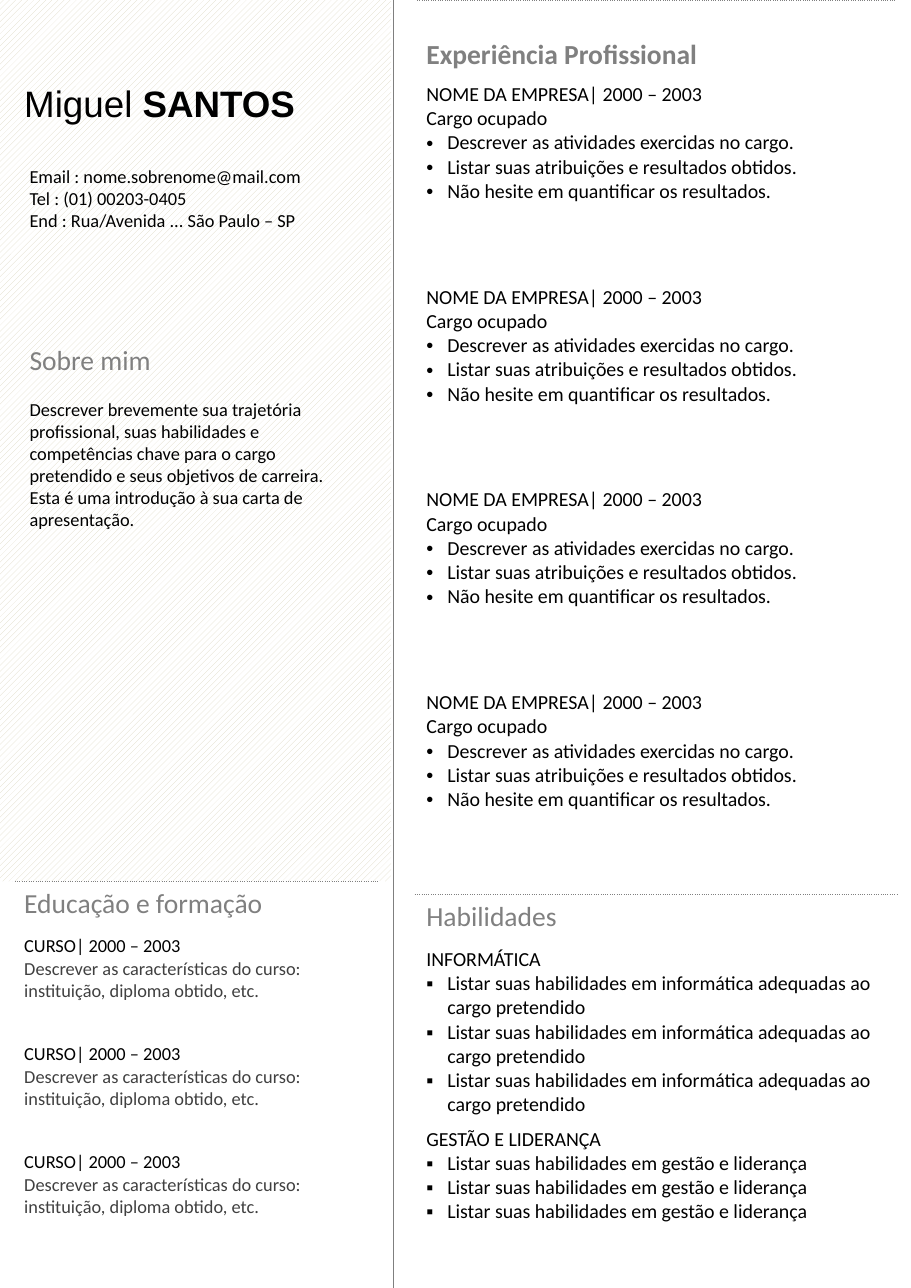
import pptx
import pptx.util
import pptx.dml.color
import pptx.enum.dml
import pptx.enum.shapes
import pptx.enum.text
import pptx.oxml
import pptx.oxml.ns
from lxml import etree

Pt = pptx.util.Pt
Inches = pptx.util.Inches
qn = pptx.oxml.ns.qn
ANCHOR = pptx.enum.text.MSO_ANCHOR
AUTO_SIZE = pptx.enum.text.MSO_AUTO_SIZE

COLORS = {"paper": "FFFFFF", "stripe": "DDD9C3", "rule": "7F7F7F",
          "heading": "808080", "ink": "000000", "soft": "404040"}

# Font values and colour of each kind of text
STYLES = {
    "name": ({"name": "Arial", "size": Pt(24), "bold": False}, "ink"),
    "surname": ({"name": "Arial", "size": Pt(24), "bold": True}, "ink"),
    "heading": ({"name": "Calibri", "size": Pt(18), "bold": False}, "heading"),
    "strong heading": ({"name": "Calibri", "size": Pt(18), "bold": True}, "heading"),
    "body": ({"name": "Calibri", "size": Pt(13), "bold": False}, "ink"),
    "small": ({"name": "Calibri", "size": Pt(12), "bold": False}, "ink"),
    "soft": ({"name": "Calibri", "size": Pt(12), "bold": False}, "soft"),
}

JOB = [("NOME DA EMPRESA| 2000 – 2003", "body", ""),
       ("Cargo ocupado", "body", ""),
       ("Descrever as atividades exercidas no cargo.", "body", "•"),
       ("Listar suas atribuições e resultados obtidos.", "body", "•"),
       ("Não hesite em quantificar os resultados.", "body", "•")]
COMPUTING = [("INFORMÁTICA", "body", "")] + 3 * [
    ("Listar suas habilidades em informática adequadas ao cargo pretendido", "body", "▪")]
LEADERSHIP = [("GESTÃO E LIDERANÇA", "body", "")] + 3 * [
    ("Listar suas habilidades em gestão e liderança", "body", "▪")]
COURSE = [("CURSO| 2000 – 2003", "small", ""),
          ("Descrever as características do curso: instituição, diploma obtido, etc.",
           "soft", "")]
CONTACT = [("Email : nome.sobrenome@mail.com", "small", ""),
           ("Tel : (01) 00203-0405", "small", ""),
           ("End : Rua/Avenida ... São Paulo – SP", "small", "")]
ABOUT = [("Sobre mim", "heading", ""),
         ("Descrever brevemente sua trajetória profissional, suas habilidades e "
          "competências chave para o cargo pretendido e seus objetivos de carreira. "
          "Esta é uma introdução à sua carta de apresentação.", "small", "")]


def rgb(color):
    return pptx.dml.color.RGBColor.from_string(COLORS[color])


def portion(box, left, top, width, height):
    """Return the part of a box given in percent of its size."""
    x, y, w, h = box
    return (int(x + w * left / 100), int(y + h * top / 100),
            int(w * width / 100), int(h * height / 100))


def add_run(paragraph, text, style):
    run = paragraph.add_run()
    run.text = text
    values, color = STYLES[style]
    for key, value in values.items():
        setattr(run.font, key, value)
    run.font.color.rgb = rgb(color)


def add_bullet(paragraph, character):
    properties = paragraph._p.get_or_add_pPr()
    properties.set("marL", str(Inches(0.19)))
    properties.set("indent", str(-Inches(0.19)))
    etree.SubElement(properties, qn("a:buFont")).set("typeface", "Arial")
    etree.SubElement(properties, qn("a:buChar")).set("char", character)


def write(frame, lines):
    for index, (text, style, bullet) in enumerate(lines):
        paragraph = frame.add_paragraph() if index else frame.paragraphs[0]
        if bullet:
            add_bullet(paragraph, bullet)
        add_run(paragraph, text, style)


def add_text(slide, box, lines):
    frame = slide.shapes.add_textbox(*box).text_frame
    frame.word_wrap = True
    frame.auto_size = AUTO_SIZE.SHAPE_TO_FIT_TEXT
    write(frame, lines)
    return frame


def add_border(cell, side):
    line = etree.SubElement(cell._tc.get_or_add_tcPr(), qn("a:" + side))
    line.set("w", str(Pt(1)))
    fill = etree.SubElement(line, qn("a:solidFill"))
    etree.SubElement(fill, qn("a:srgbClr")).set("val", COLORS["heading"])
    etree.SubElement(line, qn("a:prstDash")).set("val", "sysDot")


def add_section_table(slide, box, rows):
    """Each row is its percent of the height, its lines and its dotted side."""
    table = slide.shapes.add_table(len(rows), 1, *box).table
    table.first_row = table.horz_banding = False
    for index, (share, lines, border) in enumerate(rows):
        table.rows[index].height = int(box[3] * share / 100)
        cell = table.cell(index, 0)
        if border:
            add_border(cell, border)
        cell.fill.solid()
        cell.fill.fore_color.rgb = rgb("paper")
        write(cell.text_frame, lines)
        if not lines:  # keep an empty row from growing
            paragraph = cell.text_frame.paragraphs[0]._p
            etree.SubElement(paragraph, qn("a:endParaRPr")).set("sz", "1000")
    return table


def add_profile(slide, box):
    # Striped panel
    panel = slide.shapes.add_shape(pptx.enum.shapes.MSO_SHAPE.RECTANGLE, *box)
    panel.shadow.inherit = False
    panel.line.fill.background()
    panel.fill.patterned()
    panel.fill.pattern = pptx.enum.dml.MSO_PATTERN.WIDE_UPWARD_DIAGONAL
    panel.fill.fore_color.rgb = rgb("stripe")
    panel.fill.back_color.rgb = rgb("paper")

    # Name, in front of the panel
    title = slide.shapes.title
    panel._element.addnext(title._element)
    title.left, title.top, title.width, title.height = portion(
        box, 3.92, 8.5, 75.35, 6.25)
    frame = title.text_frame
    for key, value in {"word_wrap": False, "auto_size": AUTO_SIZE.NONE,
                       "vertical_anchor": ANCHOR.TOP}.items():
        setattr(frame, key, value)
    paragraph = frame.paragraphs[0]
    paragraph.alignment = pptx.enum.text.PP_ALIGN.LEFT
    add_run(paragraph, "Miguel ", "name")
    add_run(paragraph, "SANTOS", "surname")

    # Contact and presentation
    add_text(slide, portion(box, 5.32, 18.12, 86.83, 8.88), CONTACT)
    about = add_text(slide, portion(box, 5.32, 38.25, 82.63, 25.25), ABOUT)
    about.paragraphs[1].space_before = Pt(14.6)


def add_education(slide, box):
    heading = [("Educação e formação", "heading", "")]
    add_section_table(slide, box, [(13.02, heading, "lnT")] + 3 * [(28.99, COURSE, "")])


def add_career(slide, box):
    experience = [("Experiência Profissional", "strong heading", "")]
    skills = [("Habilidades", "heading", "")]
    rows = [(6.08, experience, "lnT")] + 3 * [(15.99, JOB, "")] + [
        (13.9, JOB, ""), (2.61, [], "lnB"), (3.74, skills, "lnT"),
        (14.16, COMPUTING, ""), (8.51, LEADERSHIP, ""), (3.04, [], "")]
    table = add_section_table(slide, box, rows)
    table.cell(0, 0).vertical_anchor = ANCHOR.BOTTOM


def add_divider(slide, box):
    x, y, _, height = box
    divider = slide.shapes.add_connector(
        pptx.enum.shapes.MSO_CONNECTOR.STRAIGHT, x, y, x, y + height)
    divider.line.color.rgb = rgb("rule")
    divider.line.width = Pt(0.5)
    etree.SubElement(divider._element.spPr, qn("a:effectLst"))


def main():
    presentation = pptx.Presentation()
    presentation.slide_width = Inches(8.27)
    presentation.slide_height = Inches(11.69)
    slide = presentation.slides.add_slide(presentation.slide_layouts[5])
    page = (0, 0, presentation.slide_width, presentation.slide_height)
    add_profile(slide, portion(page, -0.24, 0, 43.17, 68.43))
    add_divider(slide, portion(page, 43.17, 0, 0, 100))
    add_career(slide, portion(page, 45.59, 0, 52.96, 98.46))
    add_education(slide, portion(page, 1.45, 68.43, 40.15, 28.92))
    presentation.save("out.pptx")


if __name__ == "__main__":
    main()
